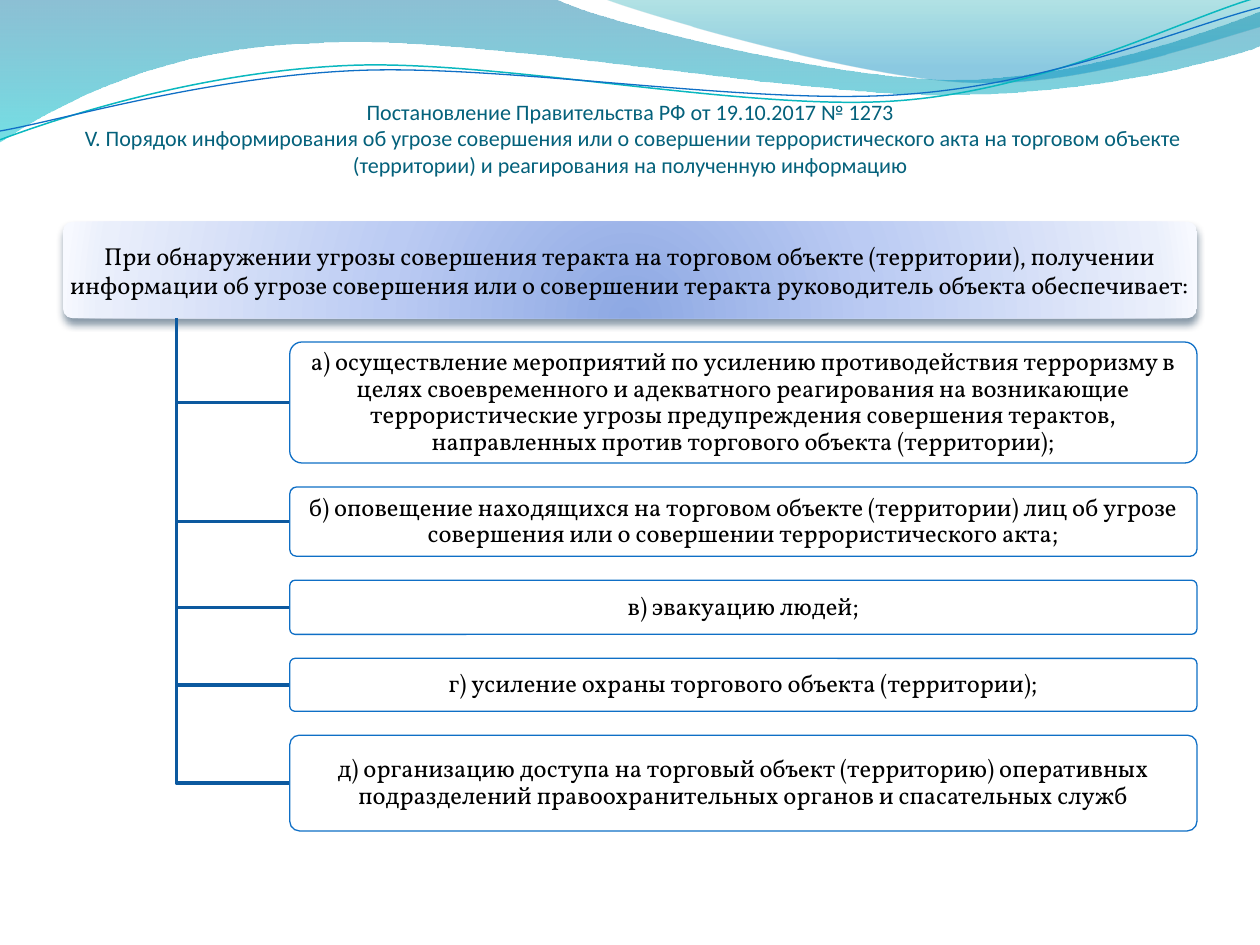
from lxml import etree
from pptx import Presentation
from pptx.dml.color import RGBColor
from pptx.enum.shapes import MSO_SHAPE
from pptx.enum.text import MSO_ANCHOR, PP_ALIGN
from pptx.oxml.ns import qn
from pptx.util import Inches, Pt

ROUND = MSO_SHAPE.ROUNDED_RECTANGLE
CENTER = PP_ALIGN.CENTER
MIDDLE, BOTTOM = MSO_ANCHOR.MIDDLE, MSO_ANCHOR.BOTTOM

COLORS = {
    "title": "04617B", "text": "000000", "card": "FFFFFF",
    "edge": "0F6FC6", "rail": "0C599F", "teal": "0AB8BF",
    "shadow": "042747", "deep": "0074A1", "aqua": "00C6CF",
    "sea": "00A1A9", "sky": "008BBF", "core": "8DA8E3",
    "mid": "BBCBF3", "pale": "EAEFFB", "rim": "F7F9FF",
}

# Each wave: start point, then points (lines) and six-number curves.
BACK = [(0, 0), (4.4, -0.01), (4.76, 0.17, 6.64, 0.63, 7.58, 0.63),
        (8.53, 0.63, 9.58, 0.26, 10, 0.09), (10.01, 0.36),
        (9.83, 0.44, 8.7, 0.76, 7.46, 0.75),
        (6.22, 0.75, 3.82, 0.28, 2.57, 0.34),
        (1.29, 0.36, 0.46, 0.83, -0.01, 1.13), (0, 0)]
FRONT = [(4.79, -0.01), (5.09, 0.11, 6.82, 0.62, 7.69, 0.65),
         (8.56, 0.69, 9.61, 0.32, 10, 0.21), (10, 0), (4.79, -0.01)]
UPPER = [(0, 1.11), (0.48, 0.93, 1.58, 0.57, 2.77, 0.52),
         (3.95, 0.47, 5.93, 0.89, 7.13, 0.8),
         (8.33, 0.71, 9.38, 0.15, 9.98, -0.02)]
LOWER = [(0, 1.04), (0.47, 0.96, 1.64, 0.61, 2.83, 0.56),
         (4.03, 0.51, 5.97, 0.84, 7.17, 0.75),
         (8.36, 0.67, 9.41, 0.21, 10, 0.06)]

TITLE = ("Постановление Правительства РФ от 19.10.2017 № 1273\v"
         " V. Порядок информирования об угрозе совершения или о совершении "
         "террористического акта на торговом объекте (территории) "
         "и реагирования на полученную информацию")
HEAD = ("При обнаружении угрозы совершения теракта на торговом объекте "
        "(территории), получении информации об угрозе совершения или "
        "о совершении теракта руководитель объекта обеспечивает:")
DUTIES = [  # height, text
    (0.96, "а) осуществление мероприятий по усилению противодействия "
           "терроризму в целях своевременного и адекватного реагирования "
           "на возникающие террористические угрозы предупреждения совершения "
           "терактов, направленных против торгового объекта (территории);"),
    (0.55, "б) оповещение находящихся на торговом объекте (территории) лиц "
           "об угрозе совершения или о совершении террористического акта;"),
    (0.43, "в) эвакуацию людей;"),
    (0.42, "г) усиление охраны торгового объекта (территории);"),
    (0.76, "д) организацию доступа на торговый объект (территорию) оперативных "
           "подразделений правоохранительных органов и спасательных служб"),
]
GAP = 0.19


def color(name):
    return RGBColor.from_string(COLORS[name])


def tint(parent, name, alpha):
    node = etree.SubElement(parent, qn("a:srgbClr"), val=COLORS[name])
    etree.SubElement(node, qn("a:alpha"), val=str(alpha * 1000))


def blend(shape, stops, center=None):
    """Gradient from (place, colour, alpha) stops: downward, or round a center."""
    grad = etree.Element(qn("a:gradFill"), rotWithShape="1")
    items = etree.SubElement(grad, qn("a:gsLst"))
    for place, name, alpha in stops:
        stop = etree.SubElement(items, qn("a:gs"), pos=str(place * 1000))
        tint(stop, name, alpha)
    if center:
        way = etree.SubElement(grad, qn("a:path"), path="circle")
        sides = {side: str(v * 1000) for side, v in zip("ltrb", center)}
        etree.SubElement(way, qn("a:fillToRect"), **sides)
    else:
        etree.SubElement(grad, qn("a:lin"), ang="5400000", scaled="0")
    shape.fill.background()
    old = shape._element.spPr.find(qn("a:noFill"))
    old.getparent().replace(old, grad)


def drop_shadow(shape):
    effects = shape._element.spPr.find(qn("a:effectLst"))
    node = etree.SubElement(
        effects, qn("a:outerShdw"), blurRad=str(Pt(4.5)), dist=str(Pt(3)),
        dir="5400000", rotWithShape="0")
    tint(node, "shadow", 48)


def bend(shape, parts):
    """Swap straight pieces for cubic curves where a part has six numbers."""
    track = next(shape._element.iter(qn("a:path")))
    for piece, part in zip(track.findall(qn("a:lnTo")), parts[1:]):
        if len(part) == 6:
            curve = etree.Element(qn("a:cubicBezTo"))
            for x, y in zip(part[::2], part[1::2]):
                etree.SubElement(curve, qn("a:pt"),
                                 x=str(Inches(x) - shape.left),
                                 y=str(Inches(y) - shape.top))
            track.replace(piece, curve)


def draw(slide, parts, line=None, width=1, close=False):
    spots = [(Inches(part[-2]), Inches(part[-1])) for part in parts]
    pen = slide.shapes.build_freeform(*spots[0])
    pen.add_line_segments(spots[1:], close=close)
    shape = pen.convert_to_shape()
    bend(shape, parts)
    shape.shadow.inherit = False
    shape.fill.background()
    if line:
        shape.line.color.rgb = color(line)
        shape.line.width = Pt(width)
    else:
        shape.line.fill.background()
    return shape


def write(slide, box, text, size, font, shade, anchor, pads, gap=1.0):
    frame = slide.shapes.add_textbox(*map(Inches, box)).text_frame
    frame.word_wrap = True
    frame.vertical_anchor = anchor
    (frame.margin_left, frame.margin_top,
     frame.margin_right, frame.margin_bottom) = map(Inches, pads)
    frame.text = text
    para = frame.paragraphs[0]
    para.alignment = CENTER
    para.line_spacing = gap
    para.font.size = Pt(size)
    para.font.name = font
    para.font.color.rgb = color(shade)


def add_waves(slide):
    back = draw(slide, BACK, close=True)
    blend(back, [(0, "deep", 45), (100, "aqua", 55)])
    front = draw(slide, FRONT, close=True)
    blend(front, [(0, "sea", 30), (80, "sky", 45)])
    draw(slide, UPPER, "teal", 0.85)
    draw(slide, LOWER, "edge", 0.75)


def add_title(slide, *box):
    write(slide, box, TITLE, 12.6, "Calibri", "title", BOTTOM,
          (0, 0.05, 0, 0))


def add_card(slide, x, y, w, h, text, gap):
    card = slide.shapes.add_shape(ROUND, *map(Inches, (x, y, w, h)))
    card.adjustments[0] = 0.1
    card.shadow.inherit = False
    inset = 0.03 * h  # keeps the text clear of the round corners
    box = (x + inset, y + inset, w - 2 * inset, h - 2 * inset)
    write(slide, box, text, 14, "Vollkorn", "text", MIDDLE,
          (0.03, 0.02, 0.03, 0.02), gap)
    return card


def add_tree(slide, x, y, w, h):
    """Head card with the duties hung below it on a rail."""
    head = add_card(slide, x, y, w, h, HEAD, 1.0)
    head.line.fill.background()
    blend(head, [(0, "core", 100), (43, "mid", 100),
                 (93, "pale", 100), (100, "rim", 100)],
          (50, 130, 50, -30))
    drop_shadow(head)
    rail, left, foot = x + w * 0.1, x + w * 0.2, y + h
    top = foot + GAP
    for tall, text in DUTIES:
        mid = top + tall / 2
        draw(slide, [(rail, foot), (rail, mid), (left, mid)], "rail", 2)
        card = add_card(slide, left, top, w * 0.8, tall, text, 0.9)
        card.fill.solid()
        card.fill.fore_color.rgb = color("card")
        card.line.color.rgb = color("edge")
        card.line.width = Pt(0.75)
        top += tall + GAP


def main():
    deck = Presentation()
    deck.slide_width, deck.slide_height = Inches(10), Inches(7.5)
    slide = deck.slides.add_slide(deck.slide_layouts[6])
    add_waves(slide)
    add_title(slide, 0.5, 0.77, 9, 0.64)
    add_tree(slide, 0.5, 1.76, 9, 0.765)
    deck.save("out.pptx")


if __name__ == "__main__":
    main()
